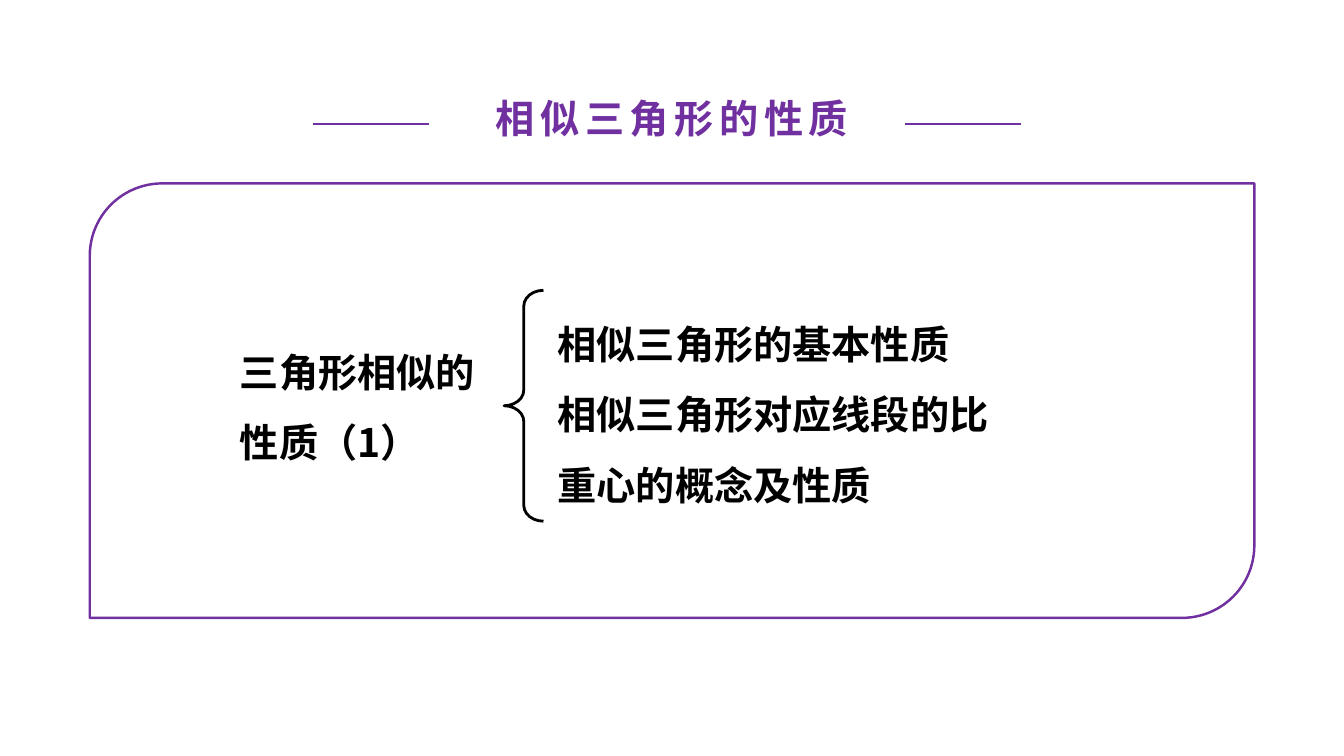
from lxml import etree
from pptx import Presentation, util as u
from pptx.dml.color import RGBColor
from pptx.enum import shapes, text
from pptx.oxml.ns import qn

COLORS = {"accent": "7030A0", "ink": "000000"}
FONT = "Noto Sans CJK SC"
WIDE, HIGH = u.Inches(13.33), u.Inches(7.5)


def part(box, x, y, w, h):
    """Return the box at the given percentages of another box."""
    left, top, wide, high = box
    return [round(n) for n in (left + wide * x / 100, top + high * y / 100,
                               wide * w / 100, high * h / 100)]


def paint(line, color, width):
    line.color.rgb = RGBColor.from_string(COLORS[color])
    line.width = u.Pt(width)


def place(shape, box):
    for name, value in zip(("left", "top", "width", "height"), box):
        setattr(shape, name, value)


def write(holder, box, lines, color, frame, para, track=0):
    place(holder, box)
    body = holder.text_frame
    body.text = "\n".join(lines)
    base = {"word_wrap": True, "auto_size": text.MSO_AUTO_SIZE.NONE}
    for name, value in {**base, **frame}.items():
        setattr(body, name, value)
    for item in body.paragraphs:
        for name, value in {"space_before": u.Pt(0), **para}.items():
            setattr(item, name, value)
        props = item._p.get_or_add_pPr()
        props.set("marL", "0")
        props.set("indent", "0")
        etree.SubElement(props, qn("a:buNone"))
        for run in item.runs:
            run.font.color.rgb = RGBColor.from_string(COLORS[color])
            style = {"size": u.Pt(28), "bold": True, "name": FONT}
            for name, value in style.items():
                setattr(run.font, name, value)
            props = run._r.get_or_add_rPr()
            props.set("spc", str(track * 100))
            etree.SubElement(props, qn("a:ea")).set("typeface", FONT)


def draw(slide, kind, box, color, width):
    shape = slide.shapes.add_shape(kind, *box)
    shape.shadow.inherit = False
    shape.fill.background()
    paint(shape.line, color, width)
    return shape


def header(slide, box):
    """Place the title between two short rules."""
    side, edge = u.Inches(0.13), u.Inches(0.07)
    frame = {"vertical_anchor": text.MSO_ANCHOR.MIDDLE,
             "margin_left": side, "margin_right": side,
             "margin_top": edge, "margin_bottom": edge}
    write(slide.shapes.title, part(box, 13.37, 0, 74.68, 100),
          ["相似三角形的性质"], "accent", frame,
          {"alignment": text.PP_ALIGN.CENTER}, track=4)
    span = 16.36
    for start in (0, 100 - span):
        x, y, w, _ = part(box, start, 60.3, span, 0)
        rule = slide.shapes.add_connector(
            shapes.MSO_CONNECTOR.STRAIGHT, x, y, x + w, y)
        paint(rule.line, "accent", 1)
        etree.SubElement(rule._element.spPr, qn("a:effectLst"))


def summary(slide, box):
    """Place a topic, a brace and its points in a framed panel."""
    kinds = shapes.MSO_SHAPE
    draw(slide, kinds.ROUND_2_DIAG_RECTANGLE, box, "accent", 1.75)
    brace = draw(slide, kinds.LEFT_BRACE,
                 part(box, 35.58, 24.59, 3.38, 53.13), "ink", 2)
    brace.adjustments[0] = 0.4
    topic, points = list(slide.placeholders)[1:]
    frame = {"vertical_anchor": text.MSO_ANCHOR.TOP}
    para = {"line_spacing": 1.5, "alignment": text.PP_ALIGN.LEFT}
    write(topic, part(box, 12.03, 31.32, 22.94, 35.03),
          ["三角形相似的性质（1）"], "ink", frame, para)
    write(points, part(box, 39.31, 24.83, 54.98, 48.96),
          ["相似三角形的基本性质", "相似三角形对应线段的比", "重心的概念及性质"],
          "ink", frame, para)


def main():
    deck = Presentation()
    deck.slide_width, deck.slide_height = WIDE, HIGH
    slide = deck.slides.add_slide(deck.slide_layouts.get_by_name("Two Content"))
    page = (0, 0, WIDE, HIGH)
    header(slide, part(page, 23.26, 11.33, 52.74, 8.4))
    summary(slide, part(page, 6.68, 24.27, 86.65, 57.47))
    deck.save("out.pptx")


if __name__ == "__main__":
    main()
